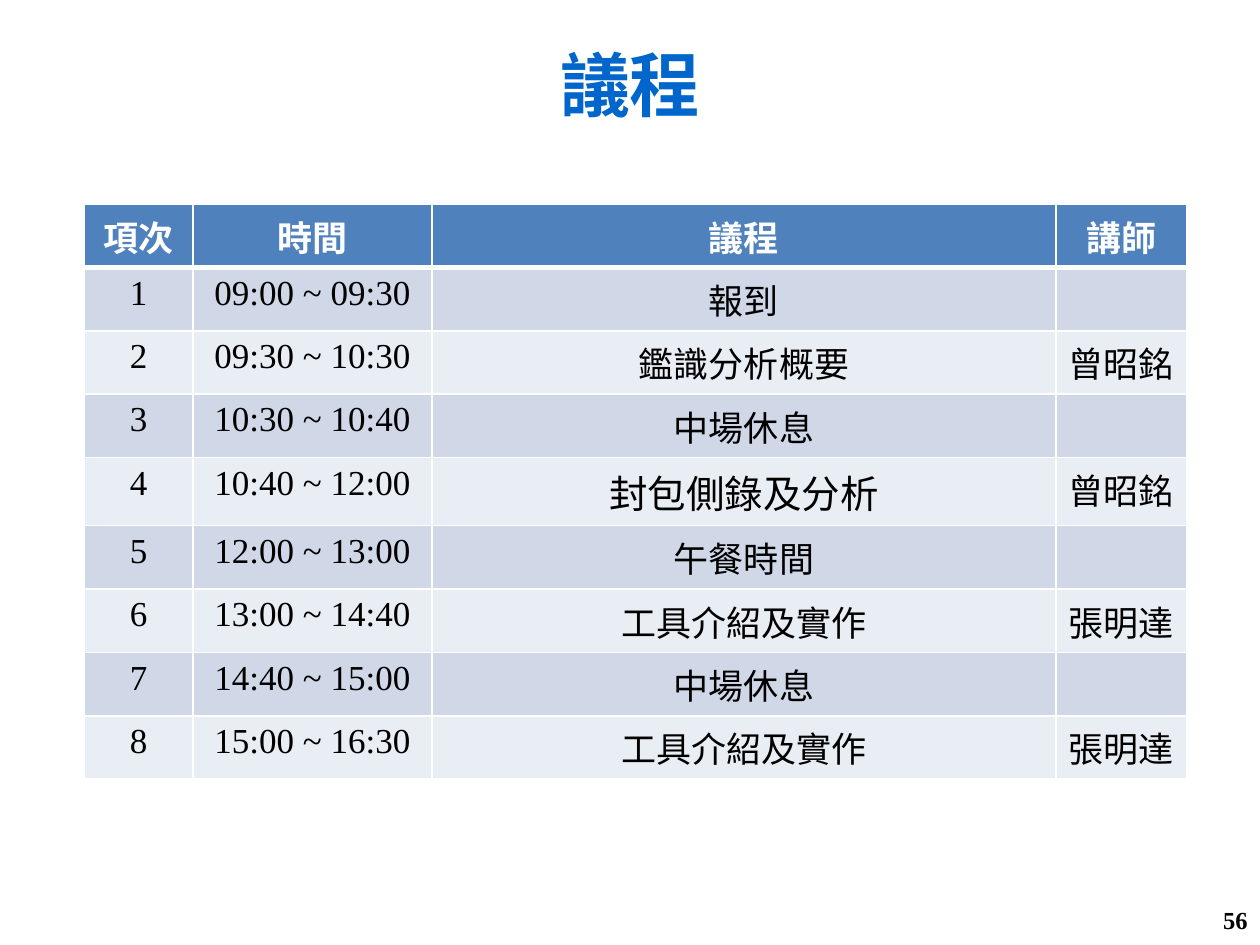
from lxml.etree import SubElement
from pptx import Presentation
from pptx.dml.color import RGBColor
from pptx.enum.text import MSO_ANCHOR as Anchor, PP_ALIGN as Align
from pptx.oxml.ns import qn
from pptx.util import Inches, Pt

# Content
TITLE = "議程"
PAGE_NUMBER = "56"
HEADERS = ["項次", "時間", "議程", "講師"]
SESSIONS = [
    ("09:00 ~ 09:30", "報到", ""),
    ("09:30 ~ 10:30", "鑑識分析概要", "曾昭銘"),
    ("10:30 ~ 10:40", "中場休息", ""),
    ("10:40 ~ 12:00", "封包側錄及分析", "曾昭銘"),
    ("12:00 ~ 13:00", "午餐時間", ""),
    ("13:00 ~ 14:40", "工具介紹及實作", "張明達"),
    ("14:40 ~ 15:00", "中場休息", ""),
    ("15:00 ~ 16:30", "工具介紹及實作", "張明達"),
]

# Style
SERIF, SANS = "Times New Roman", "Calibri"
WHITE, BLACK, BLUE = "FFFFFF", "000000", "0066CC"
HEADER_FILL, BANDS = "4F81BD", ("D0D8E8", "E9EDF4")
COLUMN_WIDTHS = [0.86, 1.9, 4.95, 1.04]
TOPIC_COLUMN = 2
LARGE_TOPIC = "封包側錄及分析"
TEXT_SIZE, LARGE_SIZE = 20, 22
ROW_HEIGHT, LARGE_HEIGHT = Pt(36.2), Pt(39)


def color(value):
    return RGBColor.from_string(value)


def write(frame, text, size, ink, bold=False, align=Align.CENTER, font=SERIF):
    frame.text = text
    para = frame.paragraphs[0]
    para.alignment = align
    for span in para.runs:
        span.font.name = font
        span.font.size = Pt(size)
        span.font.bold = bold
        span.font.color.rgb = color(ink)


def add_text(page, area, *args, **style):
    box = page.shapes.add_textbox(*map(Inches, area))
    box.text_frame.word_wrap = True
    box.text_frame.vertical_anchor = Anchor.MIDDLE
    write(box.text_frame, *args, **style)


def set_borders(cell, bottom):
    properties = cell._tc.get_or_add_tcPr()
    sides = {"lnL": 1, "lnR": 1, "lnT": 1, "lnB": bottom}
    for index, (side, width) in enumerate(sides.items()):
        line = SubElement(properties, qn(f"a:{side}"), w=str(Pt(width)))
        fill = SubElement(line, qn("a:solidFill"))
        SubElement(fill, qn("a:srgbClr"), val=WHITE)
        properties.insert(index, line)


deck = Presentation()
deck.slide_width, deck.slide_height = Inches(10), Inches(7.5)
page = deck.slides.add_slide(deck.slide_layouts[6])

# Title and page number
add_text(page, (0.5, 0.04, 9, 1.25), TITLE, 40, BLUE, bold=True)
add_text(page, (7.67, 7.1, 2.33, 0.4), PAGE_NUMBER, 14, BLACK, bold=True, align=Align.RIGHT)

# Agenda table
rows = [HEADERS] + [(str(n), *session) for n, session in enumerate(SESSIONS, 1)]
heights = [LARGE_HEIGHT if LARGE_TOPIC in row else ROW_HEIGHT for row in rows]
table = page.shapes.add_table(
    len(rows), len(HEADERS), Inches(0.67), Inches(1.62),
    Inches(sum(COLUMN_WIDTHS)), sum(heights)).table
for column, width in zip(table.columns, COLUMN_WIDTHS):
    column.width = Inches(width)

for r, (row, height) in enumerate(zip(rows, heights)):
    table.rows[r].height = height
    header = r == 0
    for c, text in enumerate(row):
        cell = table.cell(r, c)
        cell.fill.solid()
        cell.fill.fore_color.rgb = color(HEADER_FILL if header else BANDS[(r - 1) % 2])
        set_borders(cell, bottom=3 if header else 1)
        lecture = c == TOPIC_COLUMN and not header and row[-1]
        write(cell.text_frame, text, LARGE_SIZE if text == LARGE_TOPIC else TEXT_SIZE,
              WHITE if header else BLACK, bold=header, font=SANS if lecture else SERIF)

deck.save("out.pptx")
